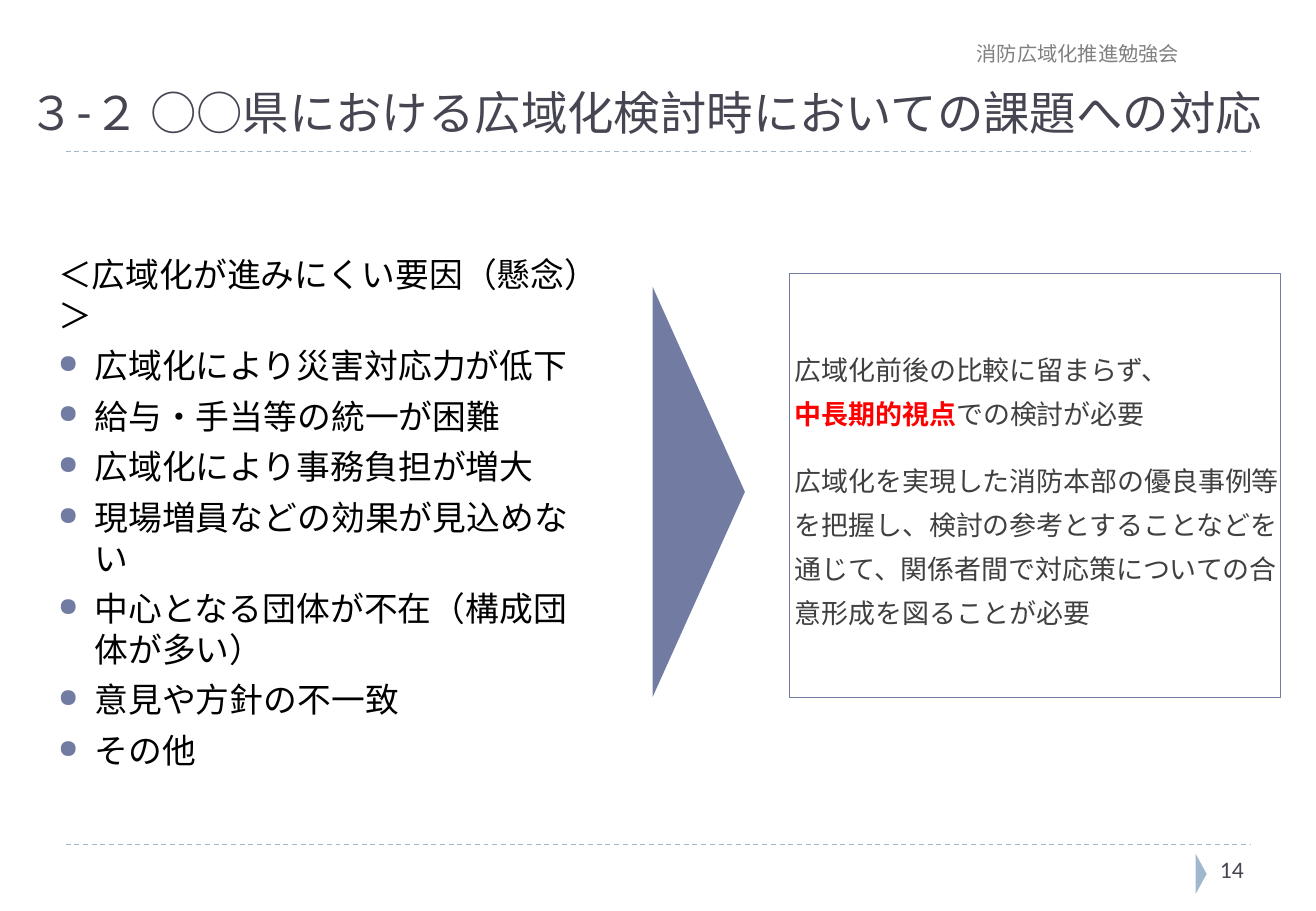
from pptx import Presentation
from pptx import util as u
from pptx.dml.color import RGBColor
from pptx.enum import dml, shapes, text
from pptx.oxml.ns import qn
from lxml import etree

C = {"accent": "727CA3", "pale": "9FB8CD", "title": "464653", "grey": "808080",
     "body": "000000", "note": "404040", "key": "FF0000"}
W, H = 10.83, 7.5

prs = Presentation()
prs.slide_width, prs.slide_height = u.Inches(W), u.Inches(H)
s = prs.slides.add_slide(prs.slide_layouts[6])


def add_run(p, words, size, font, color, bold=False):
    r = p.add_run()
    r.text = words
    r.font.size, r.font.name, r.font.bold = u.Pt(size), font, bold
    r.font.color.rgb = RGBColor.from_string(C[color])
    ea = etree.SubElement(r.font._element, qn("a:ea"))
    ea.set("typeface", "Noto Sans CJK JP")


def add_box(left, top, width, height, anchor=text.MSO_ANCHOR.TOP):
    sp = s.shapes.add_textbox(*map(u.Inches, (left, top, width, height)))
    tf = sp.text_frame
    tf.word_wrap = True
    tf.vertical_anchor = anchor
    return sp, tf


for y in (6.95, 1.25):
    rule = s.shapes.add_connector(shapes.MSO_CONNECTOR.STRAIGHT, u.Inches(0.54), u.Inches(y),
                                  u.Inches(W - 0.54), u.Inches(y))
    rule.line.color.rgb = RGBColor.from_string(C["pale"])
    rule.line.width = u.Pt(0.75)
    rule.line.dash_style = dml.MSO_LINE.DASH
    etree.SubElement(rule._element.spPr, qn("a:effectLst"))

for left, top, width, height, color in ((9.72, 7.15, 0.33, 0.09, "pale"),
                                        (4.06, 3.67, 3.38, 0.76, "accent")):
    sp = s.shapes.add_shape(shapes.MSO_SHAPE.ISOSCELES_TRIANGLE,
                            *map(u.Inches, (left, top, width, height)))
    sp.rotation = 90
    sp.shadow.inherit = False
    sp.fill.solid()
    sp.fill.fore_color.rgb = RGBColor.from_string(C[color])
    sp.line.fill.background()

labels = [
    ((0.14, 0.41, 10.57, 0.79, text.MSO_ANCHOR.BOTTOM),
     ("３-２ ○○県における広域化検討時においての課題への対応", 27.5, "Roboto Slab", "title")),
    ((7.94, 0.29, 2.13, 0.3), ("消防広域化推進勉強会", 12, "Calibri", "grey")),
    ((9.94, 6.99, 0.77, 0.4), ("14", 14, "Calibri", "title")),
]
for place, label in labels:
    sp, tf = add_box(*place)
    add_run(tf.paragraphs[0], *label)

concerns = ["＜広域化が進みにくい要因（懸念）＞", "広域化により災害対応力が低下", "給与・手当等の統一が困難",
            "広域化により事務負担が増大", "現場増員などの効果が見込めない",
            "中心となる団体が不在（構成団体が多い）", "意見や方針の不一致", "その他"]
sp, tf = add_box(0.38, 2.04, 4.65, 4.02)
for i, concern in enumerate(concerns):
    p = tf.add_paragraph() if i else tf.paragraphs[0]
    p.space_before, p.line_spacing = u.Pt(6), u.Pt(24)
    add_run(p, concern, 20, "Noto Sans CJK JP", "body")
    if i:
        pPr = p._p.get_or_add_pPr()
        pPr.set("marL", str(u.Inches(0.3)))
        pPr.set("indent", str(u.Inches(-0.3)))
        color = etree.SubElement(pPr, qn("a:buClr"))
        etree.SubElement(color, qn("a:srgbClr")).set("val", C["accent"])
        etree.SubElement(pPr, qn("a:buSzPct")).set("val", "76000")
        etree.SubElement(pPr, qn("a:buChar")).set("char", "●")

sp, tf = add_box(6.5, 2.25, 4.04, 3.49, text.MSO_ANCHOR.MIDDLE)
sp.line.color.rgb = RGBColor.from_string(C["accent"])
sp.line.width = u.Pt(0.75)
tf.margin_left, tf.margin_right = u.Inches(0.04), 0
views = [
    [("広域化前後の比較に留まらず、", "note"), None, ("中長期的視点", "key"), ("での検討が必要", "note")],
    [("広域化を実現した消防本部の優良事例等を把握し、検討の参考とすることなどを通じて、"
      "関係者間で対応策についての合意形成を図ることが必要", "note")],
]
for i, view in enumerate(views):
    p = tf.add_paragraph() if i else tf.paragraphs[0]
    p.line_spacing, p.space_before, p.space_after = u.Pt(26), u.Pt(12), u.Pt(2)
    for part in view:
        if part:
            add_run(p, part[0], 16, "Arial", part[1], part[1] == "key")
        else:
            p.add_line_break()

prs.save("out.pptx")
